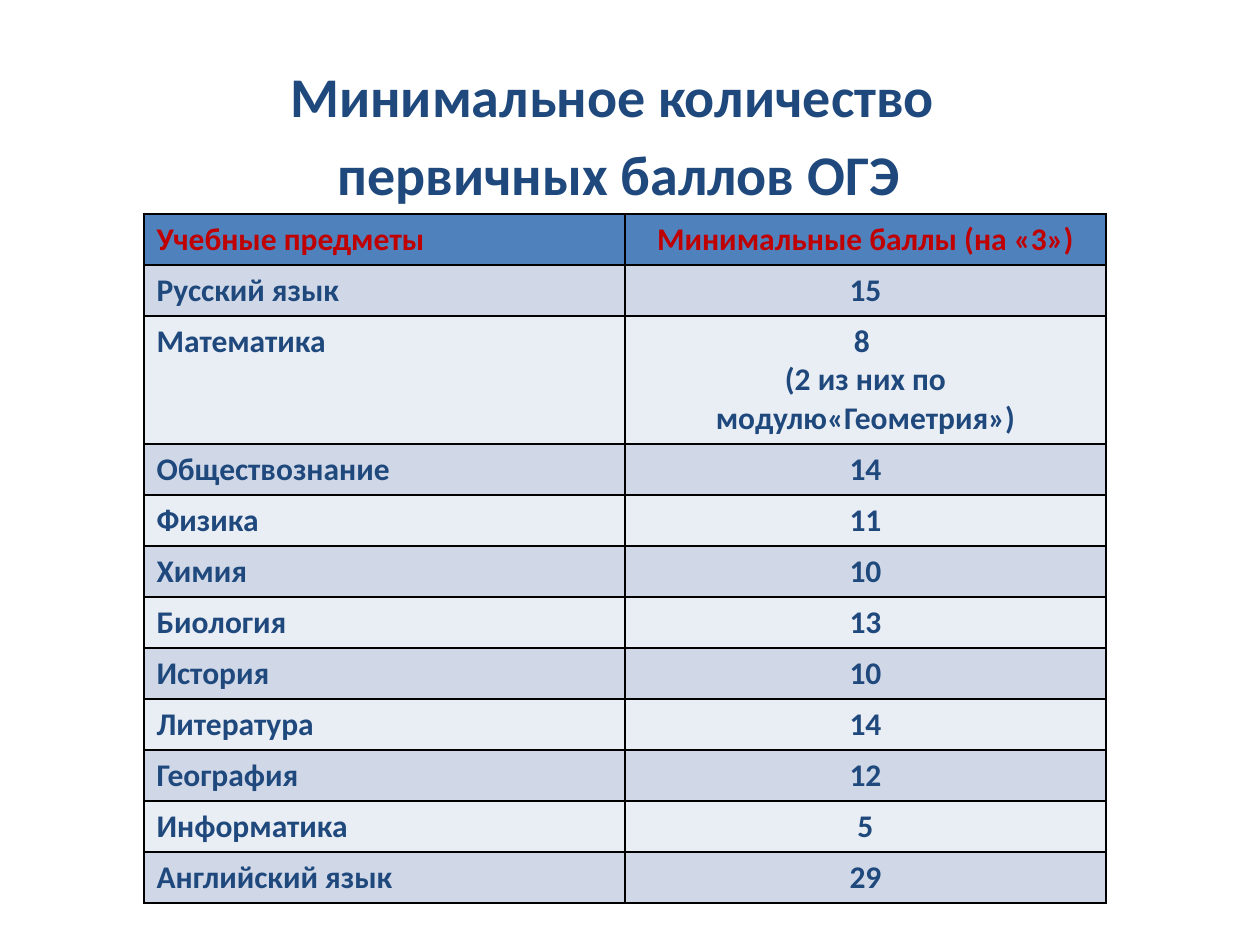
"""Build the slide with minimum OGE scores by school subject."""
from lxml import etree
from pptx import Presentation, util as u
from pptx.dml.color import RGBColor
from pptx.enum import text
from pptx.oxml import ns

PX = 914400 / 126
THEME = {
    "font": "Calibri",
    "title_size": 32,
    "cell_size": 18,
    "navy": "1F497D",
    "red": "C00000",
    "header": "4F81BD",
    "bands": ["D0D8E8", "E9EDF4"],
    "border": "000000",
}
SCORES = [
    ("Учебные предметы", "Минимальные баллы (на «3»)"),
    ("Русский язык", "15"),
    ("Математика", "8 \n(2 из них по модулю«Геометрия»)"),
    ("Обществознание", "14"),
    ("Физика", "11"),
    ("Химия", "10"),
    ("Биология", "13"),
    ("История", "10"),
    ("Литература", "14"),
    ("География", "12"),
    ("Информатика", "5"),
    ("Английский язык", "29"),
]
ROW, TALL_ROW, COLUMN = 51, 128, 481


def px(length):
    return u.Emu(round(length * PX))


def write(frame, words, size, color, align, space=0):
    frame.text = words
    for line in frame.paragraphs:
        line.alignment = align
        line.space_before = u.Pt(space)
        look = {"name": THEME["font"], "size": u.Pt(size), "bold": True}
        for key, value in look.items():
            setattr(line.runs[0].font, key, value)
        line.runs[0].font.color.rgb = RGBColor.from_string(color)


deck = Presentation()
deck.slide_width, deck.slide_height = px(1260), px(945)
slide = deck.slides.add_slide(deck.slide_layouts[6])

heading = slide.shapes.add_textbox(px(44), px(55), px(1150), px(843)).text_frame
heading.word_wrap = True
write(heading, "Минимальное количество \nпервичных баллов ОГЭ",
      THEME["title_size"], THEME["navy"], text.PP_ALIGN.CENTER, 6.4)

heights = [TALL_ROW if "\n" in score else ROW for _, score in SCORES]
grid = slide.shapes.add_table(len(SCORES), 2, px(144), px(214),
                              px(2 * COLUMN), px(sum(heights))).table
for column in grid.columns:
    column.width = px(COLUMN)

for r, (entry, height) in enumerate(zip(SCORES, heights)):
    grid.rows[r].height = px(height)
    fill = THEME["bands"][(r - 1) % 2] if r else THEME["header"]
    color = THEME["navy"] if r else THEME["red"]
    for c, align in enumerate([text.PP_ALIGN.LEFT, text.PP_ALIGN.CENTER]):
        cell = grid.cell(r, c)
        write(cell.text_frame, entry[c], THEME["cell_size"], color, align)
        cell.fill.solid()
        cell.fill.fore_color.rgb = RGBColor.from_string(fill)
        props = cell._tc.get_or_add_tcPr()
        for i, side in enumerate(["lnL", "lnR", "lnT", "lnB"]):
            edge = etree.Element(ns.qn(f"a:{side}"), w=str(u.Pt(1)))
            paint = etree.SubElement(edge, ns.qn("a:solidFill"))
            etree.SubElement(paint, ns.qn("a:srgbClr"), val=THEME["border"])
            props.insert(i, edge)

deck.save("out.pptx")
